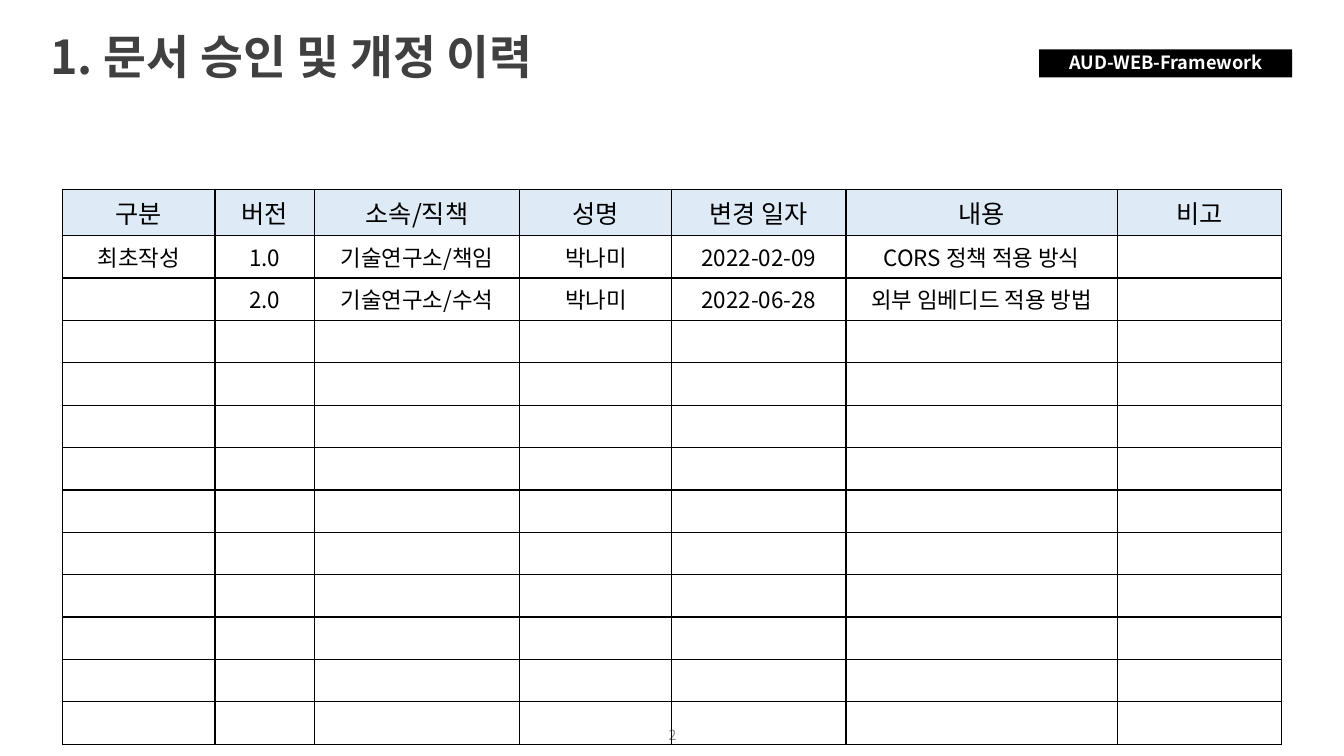
from lxml import etree
from pptx import Presentation
from pptx.dml.color import RGBColor
from pptx.enum.shapes import MSO_SHAPE
from pptx.enum.text import MSO_ANCHOR, PP_ALIGN
from pptx.oxml import parse_xml
from pptx.oxml.ns import nsdecls, qn
from pptx.util import Pt

TITLE = "1. 문서 승인 및 개정 이력"
BADGE = "AUD-WEB-Framework"
PAGE = "2"
HISTORY = [
    ("구분", "버전", "소속/직책", "성명", "변경 일자", "내용", "비고"),
    ("최초작성", "1.0", "기술연구소/책임", "박나미", "2022-02-09", "CORS 정책 적용 방식", ""),
    ("", "2.0", "기술연구소/수석", "박나미", "2022-06-28", "외부 임베디드 적용 방법", ""),
]
ROW_COUNT = 13
COLUMN_WIDTHS = [109, 70.8, 147, 108.6, 124.3, 193.9, 117.2]
HEADER_HEIGHT, ROW_HEIGHT = 32.9, 30.3

FONT = "Noto Sans CJK KR"
BLACK = RGBColor(0, 0, 0)
WHITE = RGBColor(255, 255, 255)
DARK_GRAY = RGBColor(0x40, 0x40, 0x40)
GRAY = RGBColor(0x8C, 0x8C, 0x8C)
PALE_BLUE = RGBColor(0xDE, 0xEB, 0xF7)


def write(tf, text, size, color=BLACK, bold=False, align=PP_ALIGN.CENTER,
          spacing=1.0, anchor=MSO_ANCHOR.TOP, margins=(7.2, 3.6, 7.2, 3.6)):
    tf.word_wrap = True
    tf.vertical_anchor = anchor
    tf.margin_left, tf.margin_top, tf.margin_right, tf.margin_bottom = map(Pt, margins)
    p = tf.paragraphs[0]
    p.alignment = align
    p.line_spacing = spacing
    r = p.add_run()
    r.text = text
    r.font.size = Pt(size)
    r.font.bold = bold
    r.font.name = FONT
    r.font.color.rgb = color
    east_asian = etree.SubElement(r.font._element, qn("a:ea"))
    east_asian.set("typeface", FONT)


def set_empty_size(cell, size):
    end = etree.SubElement(cell.text_frame.paragraphs[0]._p, qn("a:endParaRPr"))
    end.set("sz", str(size * 100))
    for tag in ("a:latin", "a:ea"):
        etree.SubElement(end, qn(tag)).set("typeface", FONT)


def set_borders(cell):
    props = cell._tc.get_or_add_tcPr()
    for i, side in enumerate(("lnL", "lnR", "lnT", "lnB")):
        props.insert(i, parse_xml(
            f'<a:{side} {nsdecls("a")} w="{Pt(1)}"><a:solidFill>'
            f'<a:srgbClr val="{BLACK}"/></a:solidFill></a:{side}>'))


prs = Presentation()
prs.slide_width, prs.slide_height = Pt(960), Pt(540)
s = prs.slides.add_slide(prs.slide_layouts[6])

title = s.shapes.add_textbox(Pt(36), Pt(27.4), Pt(879), Pt(38.9))
write(title.text_frame, TITLE, 33.3, color=DARK_GRAY, bold=True,
      align=PP_ALIGN.LEFT, spacing=0.7, margins=(0, 3.6, 7.2, 3.6))

page = s.shapes.add_textbox(Pt(451.4), Pt(515.5), Pt(38.9), Pt(19.4))
write(page.text_frame, PAGE, 10, color=GRAY, align=PP_ALIGN.RIGHT,
      anchor=MSO_ANCHOR.MIDDLE)

badge = s.shapes.add_shape(MSO_SHAPE.RECTANGLE, Pt(742.3), Pt(35.3), Pt(180.7), Pt(20))
badge.shadow.inherit = False
badge.fill.solid()
badge.fill.fore_color.rgb = BLACK
badge.line.fill.background()
write(badge.text_frame, BADGE, 13, color=WHITE, bold=True, spacing=0.9,
      anchor=MSO_ANCHOR.MIDDLE, margins=(7.2, 3.6, 7.2, 2.9))

heights = [HEADER_HEIGHT] + [ROW_HEIGHT] * (ROW_COUNT - 1)
table = s.shapes.add_table(ROW_COUNT, len(COLUMN_WIDTHS), Pt(44.6), Pt(135.4),
                           Pt(sum(COLUMN_WIDTHS)), Pt(sum(heights))).table
for column, width in zip(table.columns, COLUMN_WIDTHS):
    column.width = Pt(width)
blank = ("",) * len(COLUMN_WIDTHS)
rows = HISTORY + [blank] * (ROW_COUNT - len(HISTORY))
for i, (texts, height) in enumerate(zip(rows, heights)):
    table.rows[i].height = Pt(height)
    for j, text in enumerate(texts):
        cell = table.cell(i, j)
        if i == 0:
            cell.fill.solid()
            cell.fill.fore_color.rgb = PALE_BLUE
        else:
            cell.fill.background()
        set_borders(cell)
        if text:
            write(cell.text_frame, text, 16 if i else 18)
        else:
            set_empty_size(cell, 16)

prs.save("out.pptx")
